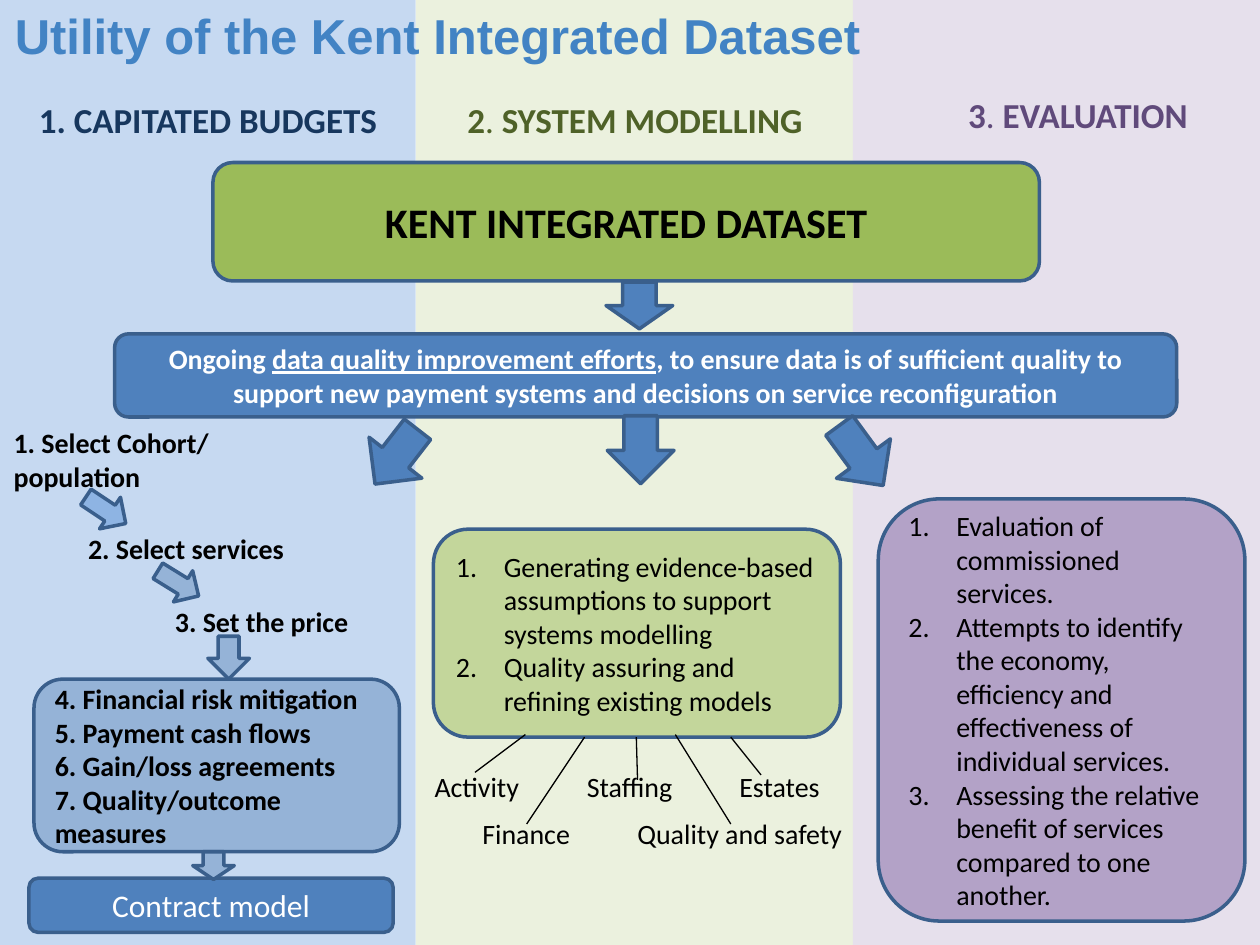
from lxml import etree
from pptx import Presentation
from pptx.dml.color import RGBColor
from pptx.enum import shapes, text
from pptx.oxml import ns
from pptx.util import Inches, Pt

KIND = shapes.MSO_SHAPE
LEFT, CENTER = text.PP_ALIGN.LEFT, text.PP_ALIGN.CENTER
MIDDLE = text.MSO_ANCHOR.MIDDLE
OUTLINE, BLUE, SOFT_BLUE = "3A5F8C", "4F81BD", "95B3D7"
color = RGBColor.from_string

prs = Presentation()
prs.slide_width, prs.slide_height = Inches(10), Inches(7.5)
slide = prs.slides.add_slide(prs.slide_layouts[6])


def block(kind, place, fill, outline=OUTLINE, rotation=0):
    shape = slide.shapes.add_shape(kind, *[Inches(v) for v in place])
    shape.shadow.inherit = False
    shape.rotation = rotation
    shape.fill.solid()
    shape.fill.fore_color.rgb = color(fill)
    if outline:
        shape.line.color.rgb = color(outline)
        shape.line.width = Pt(2)
    else:
        shape.line.fill.background()
    return shape


def write(shape, lines, size, ink="000000", bold=False, align=LEFT, font="Calibri", wrap=True):
    frame = shape.text_frame
    frame.word_wrap = wrap
    for index, line in enumerate(lines):
        paragraph = frame.add_paragraph() if index else frame.paragraphs[0]
        paragraph.alignment = align
        for piece in line.split("|"):
            run = paragraph.add_run()
            run.text = piece
            run.font.size, run.font.bold, run.font.name = Pt(size), bold, font
            run.font.color.rgb = color(ink)
    return frame


for left, width, fill in [(0, 3.3, "C6D9F1"), (3.3, 3.5, "EBF1DE"), (6.77, 3.23, "E6E0EC")]:
    block(KIND.RECTANGLE, (left, 0, width, 7.5), fill, None)

dataset = block(KIND.ROUNDED_RECTANGLE, (1.69, 1.29, 6.56, 0.94), "9BBB59")
write(dataset, ["KENT INTEGRATED DATASET"], 24, bold=True, align=CENTER)

quality = block(KIND.ROUNDED_RECTANGLE, (0.91, 2.65, 8.43, 0.66), BLUE)
quality_frame = write(quality, [
    "Ongoing |data quality improvement efforts|, to ensure data is of sufficient quality to "
    "support new payment systems and decisions on service reconfiguration"
], 16, "FFFFFF", True, CENTER)
quality_frame.paragraphs[0].runs[1].font.underline = True

headings = [
    ((0.21, 0.73, 2.98, 0.44), "1. CAPITATED BUDGETS", "17375E", LEFT),
    ((3.38, 0.73, 3.32, 0.44), "2|. |SYSTEM MODELLING", "4F6228", CENTER),
    ((7.12, 0.69, 2.87, 0.44), "3|. |EVALUATION", "604A7B", CENTER),
]
for place, heading, ink, align in headings:
    box = slide.shapes.add_textbox(*[Inches(v) for v in place])
    frame = write(box, [heading], 20, ink, True, align)
    for run in frame.paragraphs[0].runs[1:2]:
        run.font.bold = False

labels = [
    ((0.01, 3.33, 2.26, 0.64), "1. Select Cohort/ population", True, True),
    ((0.6, 4.17, 1.78, 0.37), "2. Select services", True, False),
    ((1.29, 4.75, 1.6, 0.37), "3. Set the price", True, False),
    ((3.35, 6.06, 0.88, 0.37), "Activity", False, False),
    ((4.56, 6.06, 0.9, 0.37), "Staffing", False, False),
    ((5.77, 6.06, 0.85, 0.37), "Estates", False, False),
    ((3.73, 6.43, 0.9, 0.37), "Finance", False, False),
    ((4.96, 6.43, 2.49, 0.37), "Quality and safety", False, True),
]
for place, label, bold, wrap in labels:
    box = slide.shapes.add_textbox(*[Inches(v) for v in place])
    write(box, [label], 16, bold=bold, wrap=wrap)

terms = block(KIND.ROUNDED_RECTANGLE, (0.27, 5.39, 2.9, 1.37), SOFT_BLUE)
write(terms, [
    "4. Financial risk mitigation",
    "5. Payment cash flows",
    "6. Gain/loss agreements",
    "7. Quality/outcome measures",
], 16, bold=True)

contract = block(KIND.ROUNDED_RECTANGLE, (0.23, 6.97, 2.89, 0.43), BLUE)
write(contract, ["Contract model"], 18, "FFFFFF", align=CENTER)

numbered = [
    ((3.44, 4.2, 3.23, 1.65), "C3D69B", [
        "Generating evidence-based assumptions to support systems modelling",
        "Quality assuring and refining existing models",
    ]),
    ((6.97, 3.96, 2.91, 3.35), "B3A2C7", [
        "Evaluation of commissioned services.",
        "Attempts to identify the economy, efficiency and effectiveness of individual services.",
        "Assessing the relative benefit of services compared to one another.",
    ]),
]
for place, fill, items in numbered:
    panel = block(KIND.ROUNDED_RECTANGLE, place, fill)
    for paragraph in write(panel, items, 16).paragraphs:
        props = paragraph._p.get_or_add_pPr()
        props.set("marL", str(Inches(0.38)))
        props.set("indent", str(-Inches(0.38)))
        etree.SubElement(props, ns.qn("a:buFont"), typeface="+mj-lt")
        etree.SubElement(props, ns.qn("a:buAutoNum"), type="arabicPeriod")

arrows = [
    ((4.81, 2.24, 0.53, 0.37), BLUE, 0),
    ((2.88, 3.35, 0.53, 0.55), BLUE, 37.8),
    ((4.82, 3.3, 0.53, 0.54), BLUE, 0),
    ((6.57, 3.32, 0.53, 0.59), BLUE, 323.8),
    ((0.69, 3.86, 0.3, 0.38), "8EB4E3", 303.6),
    ((1.27, 4.44, 0.29, 0.38), SOFT_BLUE, 301.7),
    ((1.65, 5.05, 0.33, 0.34), SOFT_BLUE, 0),
    ((1.53, 6.76, 0.33, 0.22), SOFT_BLUE, 0),
]
for place, fill, rotation in arrows:
    block(KIND.DOWN_ARROW, place, fill, rotation=rotation)

branches = [
    (4.17, 5.83, 3.77, 6.13),
    (5.05, 5.85, 5.06, 6.19),
    (5.8, 5.85, 6.04, 6.15),
    (4.64, 5.85, 4.18, 6.54),
    (5.36, 5.83, 5.8, 6.54),
]
for ends in branches:
    branch = slide.shapes.add_connector(shapes.MSO_CONNECTOR.STRAIGHT, *[Inches(v) for v in ends])
    branch.line.color.rgb = color("000000")
    branch.line.width = Pt(0.75)
    etree.SubElement(branch._element.spPr, ns.qn("a:effectLst"))

title = slide.shapes.add_textbox(Inches(0.02), Inches(-0.21), Inches(8.9), Inches(0.97))
title_frame = write(title, ["Utility of the Kent Integrated Dataset"], 28, "4283C4", True, font="Arial")
title_frame.vertical_anchor = MIDDLE

prs.save("out.pptx")
